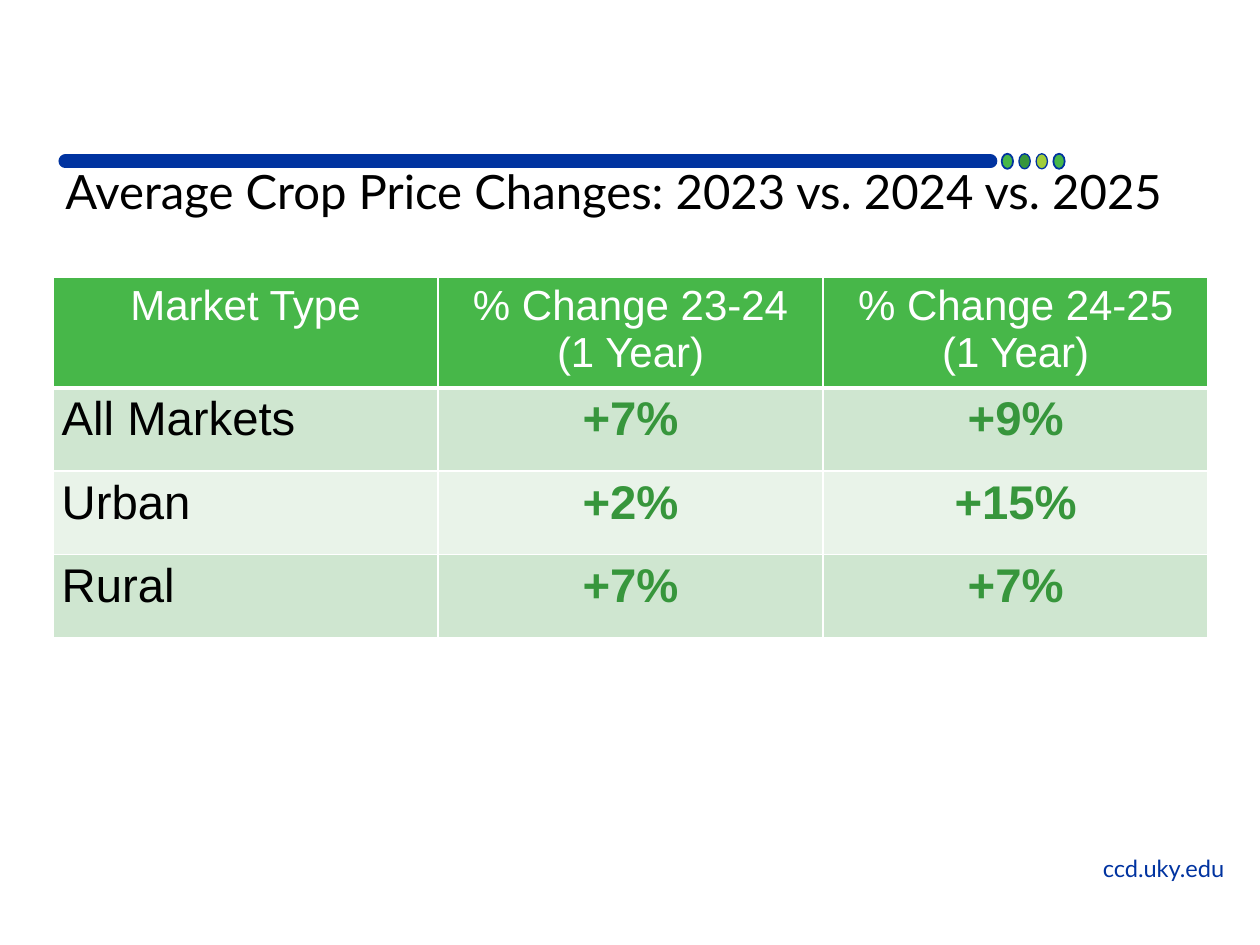
from dataclasses import dataclass
from lxml.etree import SubElement as Sub
from pptx import Presentation
from pptx.dml.color import RGBColor as RGB
from pptx.enum.shapes import MSO_CONNECTOR as Conn, MSO_SHAPE as Kind
from pptx.enum.text import MSO_ANCHOR as Anchor, PP_ALIGN as Align
from pptx.oxml.ns import qn
from pptx.util import Inches, Pt


@dataclass(frozen=True)
class Theme:
    blue: str = "0033A0"
    green: str = "47B749"
    dark: str = "37963C"
    lime: str = "A1CD3A"
    white: str = "FFFFFF"
    black: str = "000000"
    bands: tuple = ("CFE6D0", "E9F3E9")
    head: str = "Lato"
    body: str = "Arial"
    big: float = 27
    mid: float = 24
    small: float = 13.5


class Deck:
    def __init__(self, theme, slide):
        self.theme = theme
        self.slide = slide

    def put(self, frame, text, font, size, color, bold=False, align=Align.LEFT):
        for i, line in enumerate(text.split("\n")):
            para = frame.paragraphs[0] if i == 0 else frame.add_paragraph()
            para.alignment = align
            run = para.add_run()
            run.text = line
            run.font.name = font
            run.font.size = Pt(size)
            run.font.bold = bold
            run.font.color.rgb = RGB.from_string(color)

    def text(self, box, text, size, color, align=Align.LEFT, anchor=Anchor.TOP):
        frame = self.slide.shapes.add_textbox(*map(Inches, box)).text_frame
        frame.word_wrap = True
        frame.vertical_anchor = anchor
        self.put(frame, text, self.theme.head, size, color, align=align)
        return frame

    def bar(self, left, right, y, color, width):
        line = self.slide.shapes.add_connector(
            Conn.STRAIGHT, Inches(right), Inches(y), Inches(left), Inches(y))
        line.line.color.rgb = RGB.from_string(color)
        line.line.width = Pt(width)
        props = line._element.spPr
        props.find(qn("a:ln")).set("cap", "rnd")
        Sub(props, qn("a:effectLst"))

    def dot(self, left, top, fill, width):
        dot = self.slide.shapes.add_shape(
            Kind.OVAL, Inches(left), Inches(top), Inches(0.09), Inches(0.12))
        dot.shadow.inherit = False
        dot.fill.solid()
        dot.fill.fore_color.rgb = RGB.from_string(fill)
        dot.line.color.rgb = RGB.from_string(self.theme.blue)
        dot.line.width = Pt(width)

    def edge(self, cell, top, bottom):
        props = cell._tc.get_or_add_tcPr()
        for tag, width in (("lnL", 1), ("lnR", 1), ("lnT", top), ("lnB", bottom)):
            line = Sub(props, qn(f"a:{tag}"), w=str(Pt(width)))
            Sub(Sub(line, qn("a:solidFill")), qn("a:srgbClr"), val=self.theme.white)

    def cell(self, cell, text, row, col):
        t = self.theme
        cell.margin_left = cell.margin_right = Inches(0.07)
        cell.margin_top = cell.margin_bottom = Inches(0.04)
        self.edge(cell, 3 if row == 1 else 1, 3 if row == 0 else 1)
        cell.fill.solid()
        fill = t.bands[(row - 1) % 2] if row else t.green
        cell.fill.fore_color.rgb = RGB.from_string(fill)
        size = t.big if row else t.mid
        color = t.white if row == 0 else t.dark if col else t.black
        align = Align.LEFT if row and col == 0 else Align.CENTER
        self.put(cell.text_frame, text, t.body, size, color,
                 bold=row > 0 and col > 0, align=align)

    def table(self, box, rows, highs):
        grid = self.slide.shapes.add_table(
            len(rows), len(rows[0]), *map(Inches, box)).table
        for row, high in zip(grid.rows, highs):
            row.height = Inches(high)
        for r, row in enumerate(rows):
            for c, text in enumerate(row):
                self.cell(grid.cell(r, c), text, r, c)


def main():
    show = Presentation()
    show.slide_width, show.slide_height = Inches(10), Inches(7.5)
    t = Theme()
    deck = Deck(t, show.slides.add_slide(show.slide_layouts[6]))

    deck.bar(0.52, 7.86, 1.28, t.blue, 8)
    dots = [(t.green, 1), (t.dark, 0.75), (t.lime, 0.75), (t.green, 1)]
    step = (8.36 - 7.95) / (len(dots) - 1)
    for i, (fill, width) in enumerate(dots):
        deck.dot(7.95 + i * step, 1.22, fill, width)

    deck.text((7.82, 6.73, 2.83, 0.33), "ccd.uky.edu", t.small, t.blue, Align.CENTER)
    title = deck.text((0.42, 1.15, 9.4, 0.64),
                      "Average Crop Price Changes: 2023 vs. 2024 vs. 2025",
                      t.big, t.black, anchor=Anchor.BOTTOM)
    title.paragraphs[0].line_spacing = 0.9

    rows = [
        ("Market Type", "% Change 23-24\n(1 Year)", "% Change 24-25\n(1 Year)"),
        ("All Markets", "+7%", "+9%"),
        ("Urban", "+2%", "+15%"),
        ("Rural", "+7%", "+7%"),
    ]
    deck.table((0.42, 2.2, 9.17, 2.85), rows, [0.88] + [0.66] * 3)
    show.save("out.pptx")


if __name__ == "__main__":
    main()
